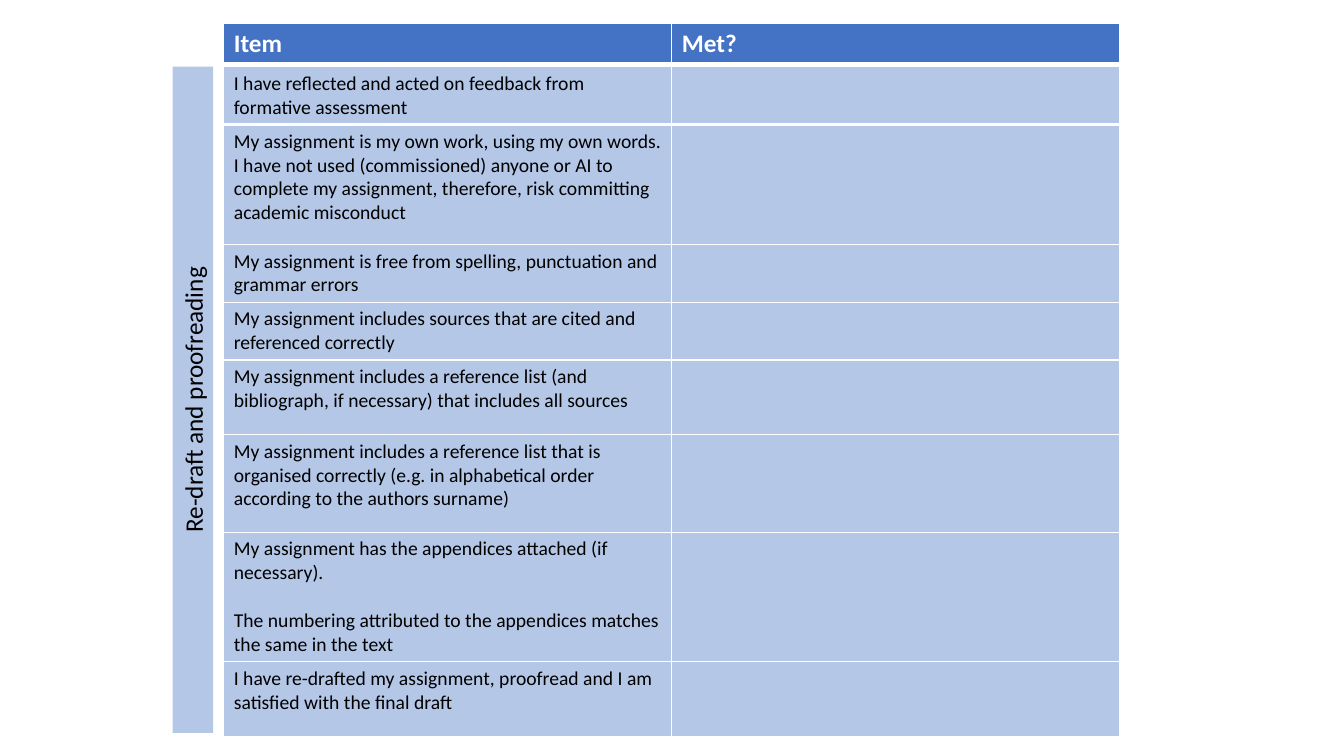
from lxml import etree
from pptx import Presentation
from pptx.dml.color import RGBColor
from pptx.enum.shapes import MSO_SHAPE
from pptx.enum.text import MSO_ANCHOR, MSO_AUTO_SIZE, PP_ALIGN
from pptx.oxml.ns import qn
from pptx.util import Cm, Pt

RECTANGLE = MSO_SHAPE.RECTANGLE
MIDDLE = MSO_ANCHOR.MIDDLE
GROW = MSO_AUTO_SIZE.SHAPE_TO_FIT_TEXT
CENTER = PP_ALIGN.CENTER

BLUE = RGBColor(0x44, 0x72, 0xC4)
PALE_BLUE = RGBColor(0xB4, 0xC7, 0xE7)
WHITE = RGBColor(0xFF, 0xFF, 0xFF)
BLACK = RGBColor(0, 0, 0)
FONT = "Calibri"

STAGE = "Re-draft and proofreading"
HEADINGS = [(1.04, [["Item"], ["Met?"]])]
CHECKLIST = [
    (1.32, ["I have reflected and acted on feedback from formative assessment"]),
    (3.02, ["My assignment is my own work, using my own words. I have not used "
            "(commissioned) anyone or AI to complete my assignment, therefore, "
            "risk committing academic misconduct"]),
    (1.32, ["My assignment is free from spelling, punctuation and grammar errors"]),
    (1.32, ["My assignment includes sources that are cited and referenced correctly"]),
    (1.88, ["My assignment includes a reference list (and bibliograph, if necessary) "
            "that includes all sources"]),
    (2.46, ["My assignment includes a reference list that is organised correctly "
            "(e.g. in alphabetical order according to the authors surname)"]),
    (3.02, ["My assignment has the appendices attached (if necessary).",
            "The numbering attributed to the appendices matches the same in the text"]),
    (1.88, ["I have re-drafted my assignment, proofread and I am satisfied "
            "with the final draft"]),
]

LEFT, WIDTH = 5.64, 22.58
HEADING_TOP, HEADING_HEIGHT = 0.58, 1.04
LIST_TOP, LIST_HEIGHT = 1.68, 16.79
STAGE_CENTER, STAGE_THICKNESS = 4.86, 1.02
PARAGRAPH_GAP = 17


def write(paragraph, text, size, color, bold=False):
    """Add one formatted run to a paragraph."""
    run = paragraph.add_run()
    run.text = text
    run.font.name = FONT
    run.font.size = Pt(size)
    run.font.bold = bold
    run.font.color.rgb = color


def add_borders(cell, is_first_row):
    """Draw white cell borders, with a thick rule below the first row."""
    widths = {"lnL": 1, "lnR": 1}
    if is_first_row:
        widths["lnT"] = 1
    widths["lnB"] = 3 if is_first_row else 1
    properties = cell._tc.get_or_add_tcPr()
    for position, (edge, width) in enumerate(widths.items()):
        border = etree.Element(qn(f"a:{edge}"), w=str(Pt(width)))
        fill = etree.SubElement(border, qn("a:solidFill"))
        etree.SubElement(fill, qn("a:srgbClr"), val=str(WHITE))
        properties.insert(position, border)


def add_grid(slide, rows, top, height, fill, size, color, bold=False):
    """Add a two-column table of (row height, cells) rows."""
    frame = slide.shapes.add_table(
        len(rows), 2, Cm(LEFT), Cm(top), Cm(WIDTH), Cm(height))
    grid = frame.table
    grid.first_row = grid.horz_banding = False
    for row_index, (row_height, cells) in enumerate(rows):
        grid.rows[row_index].height = Cm(row_height)
        for column, lines in enumerate(cells):
            cell = grid.cell(row_index, column)
            cell.fill.solid()
            cell.fill.fore_color.rgb = fill
            add_borders(cell, row_index == 0)
            for line_index, line in enumerate(lines):
                body = cell.text_frame
                paragraph = body.add_paragraph() if line_index else body.paragraphs[0]
                if line_index:
                    paragraph.space_before = Pt(PARAGRAPH_GAP)
                write(paragraph, line, size, color, bold)
    frame.height = Cm(height)


def add_stage(slide):
    """Add the vertical stage label beside the checklist."""
    stage = slide.shapes.add_shape(
        RECTANGLE, Cm(STAGE_CENTER - LIST_HEIGHT / 2),
        Cm(LIST_TOP + LIST_HEIGHT / 2 - STAGE_THICKNESS / 2),
        Cm(LIST_HEIGHT), Cm(STAGE_THICKNESS))
    stage.rotation = 270
    stage.shadow.inherit = False
    stage.fill.solid()
    stage.fill.fore_color.rgb = PALE_BLUE
    stage.line.fill.background()
    label = stage.text_frame
    label.word_wrap = True
    label.auto_size = GROW
    label.vertical_anchor = MIDDLE
    label.paragraphs[0].alignment = CENTER
    write(label.paragraphs[0], STAGE, 18, BLACK)


def main():
    """Build the proofreading checklist slide."""
    deck = Presentation()
    deck.slide_width, deck.slide_height = Cm(33.87), Cm(19.05)
    slide = deck.slides.add_slide(deck.slide_layouts[6])
    items = [(height, [lines, []]) for height, lines in CHECKLIST]
    add_grid(slide, items, LIST_TOP, LIST_HEIGHT, PALE_BLUE, 14, BLACK)
    add_stage(slide)
    add_grid(slide, HEADINGS, HEADING_TOP, HEADING_HEIGHT, BLUE, 18, WHITE, True)
    deck.save("out.pptx")


if __name__ == "__main__":
    main()
